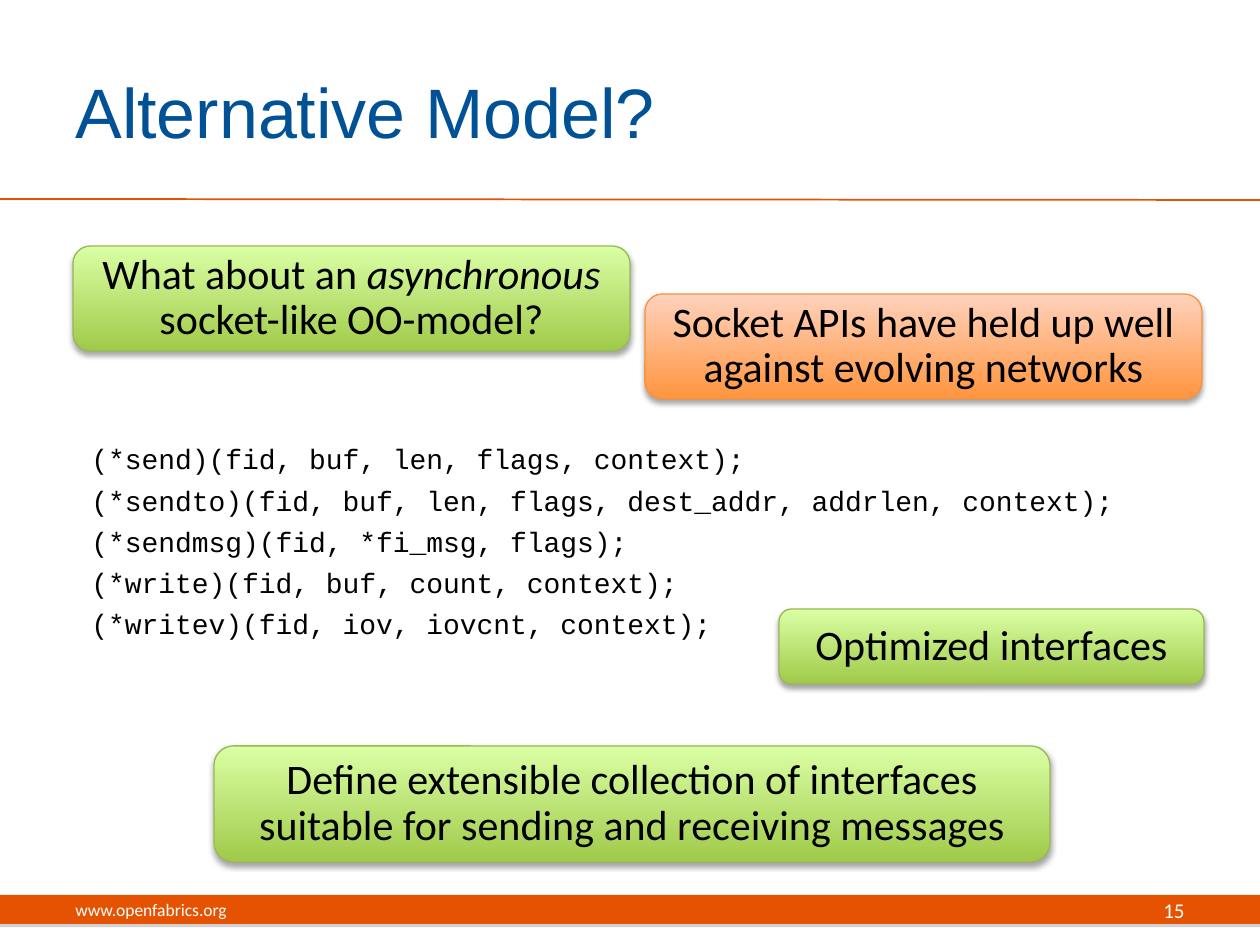
from lxml.etree import SubElement
from pptx import Presentation
from pptx.dml.color import RGBColor
from pptx.enum.shapes import MSO_CONNECTOR, MSO_SHAPE
from pptx.enum.text import MSO_ANCHOR, PP_ALIGN
from pptx.oxml.ns import qn
from pptx.util import Pt

EMU_PER_PX = 914400 / 126
WHITE = RGBColor(0xFF, 0xFF, 0xFF)
BLACK = RGBColor(0x00, 0x00, 0x00)
GRAY = RGBColor(0x80, 0x80, 0x80)
BLUE = RGBColor(0x00, 0x51, 0x95)
ORANGE = RGBColor(0xE5, 0x53, 0x02)
GREEN_DARK = RGBColor(0xA0, 0xCA, 0x4A)
GREEN_LIGHT = RGBColor(0xDA, 0xFF, 0xA5)
GREEN_LINE = RGBColor(0x98, 0xB9, 0x55)
PEACH_DARK = RGBColor(0xFF, 0x95, 0x3E)
PEACH_LIGHT = RGBColor(0xFF, 0xD2, 0xBD)
PEACH_LINE = RGBColor(0xF6, 0x92, 0x40)
GREEN = (GREEN_DARK, GREEN_LIGHT, GREEN_LINE)
PEACH = (PEACH_DARK, PEACH_LIGHT, PEACH_LINE)

CODE = [
    "(*send)(fid, buf, len, flags, context);",
    "(*sendto)(fid, buf, len, flags, dest_addr, addrlen, context);",
    "(*sendmsg)(fid, *fi_msg, flags);",
    "(*write)(fid, buf, count, context);",
    "(*writev)(fid, iov, iovcnt, context);",
]


def px(n):
    return round(n * EMU_PER_PX)


class Deck:
    font = "Calibri"

    def __init__(self, width, height):
        self.prs = Presentation()
        self.prs.slide_width, self.prs.slide_height = px(width), px(height)
        self.s = self.prs.slides.add_slide(self.prs.slide_layouts[6])

    def style(self, r, size, color, font=None):
        r.font.size = Pt(size)
        r.font.name = font or self.font
        r.font.color.rgb = color

    def shadow(self, sp, color, blur):
        sp.shadow.inherit = False
        effects = sp._element.spPr.find(qn("a:effectLst"))
        outer = SubElement(effects, qn("a:outerShdw"), blurRad=str(Pt(blur)),
                           dist=str(Pt(1.8)), dir="5400000", rotWithShape="0")
        clr = SubElement(outer, qn("a:srgbClr"), val=str(color))
        SubElement(clr, qn("a:alpha"), val="35000")

    def band(self, x, y, w, h, color):
        sp = self.s.shapes.add_shape(MSO_SHAPE.RECTANGLE, px(x), px(y), px(w), px(h))
        sp.fill.solid()
        sp.fill.fore_color.rgb = color
        sp.line.fill.background()
        self.shadow(sp, GRAY, 0)

    def rule(self, x1, y1, x2, y2, color):
        line = self.s.shapes.add_connector(
            MSO_CONNECTOR.STRAIGHT, px(x1), px(y1), px(x2), px(y2))
        line.line.color.rgb = color
        line.line.width = Pt(1)
        SubElement(line._element.spPr, qn("a:effectLst"))

    def text(self, x, y, w, h, lines, size, color, font=None, align=PP_ALIGN.LEFT,
             anchor=MSO_ANCHOR.MIDDLE, top=6, gap=0):
        tf = self.s.shapes.add_textbox(px(x), px(y), px(w), px(h)).text_frame
        tf.word_wrap = True
        tf.vertical_anchor = anchor
        tf.margin_top = px(top)
        for i, line in enumerate(lines):
            p = tf.add_paragraph() if i else tf.paragraphs[0]
            p.text = line
            p.alignment = align
            p.space_before = Pt(gap if i else 0)
            self.style(p.runs[0], size, color, font)

    def callout(self, x, y, w, h, parts, palette, italic=None):
        dark, light, edge = palette
        sp = self.s.shapes.add_shape(
            MSO_SHAPE.ROUNDED_RECTANGLE, px(x), px(y), px(w), px(h))
        sp.fill.gradient()
        sp.fill.gradient_angle = 90
        for stop, color in zip(sp.fill.gradient_stops, (dark, light)):
            stop.color.rgb = color
        sp.line.color.rgb = edge
        sp.line.width = Pt(0.75)
        self.shadow(sp, BLACK, 3.1)
        tf = sp.text_frame
        tf.word_wrap = True
        tf.vertical_anchor = MSO_ANCHOR.MIDDLE
        tf.margin_left = tf.margin_right = px(16)
        tf.margin_top = tf.margin_bottom = px(10)
        p = tf.paragraphs[0]
        p.alignment = PP_ALIGN.CENTER
        p.line_spacing = 0.9
        for part in parts:
            r = p.add_run()
            r.text = part
            self.style(r, 24, BLACK)
            r.font.italic = part == italic


def main():
    deck = Deck(1260, 945)
    deck.band(0, 895, 1260, 29, ORANGE)
    deck.rule(0, 199, 1260, 200, ORANGE)
    deck.text(63, 32, 1029, 157, ["Alternative Model?"], 40, BLUE, "Arial")
    deck.text(79, 431, 1134, 210, CODE, 16, BLACK, "Courier New",
              anchor=MSO_ANCHOR.TOP, top=11, gap=4.3)
    deck.text(63, 885, 399, 50, ["www.openfabrics.org"], 10, WHITE)
    deck.text(903, 885, 294, 50, ["15"], 12, WHITE, align=PP_ALIGN.RIGHT)
    deck.callout(73, 246, 557, 105,
                 ["What about an ", "asynchronous", " socket-like OO-model?"],
                 GREEN, italic="asynchronous")
    deck.callout(214, 746, 836, 116,
                 ["Define extensible collection of interfaces "
                  "suitable for sending and receiving messages"], GREEN)
    deck.callout(779, 609, 425, 75, ["Optimized interfaces"], GREEN)
    deck.callout(645, 294, 557, 105,
                 ["Socket APIs have held up well against evolving networks"], PEACH)
    deck.prs.save("out.pptx")


if __name__ == "__main__":
    main()
